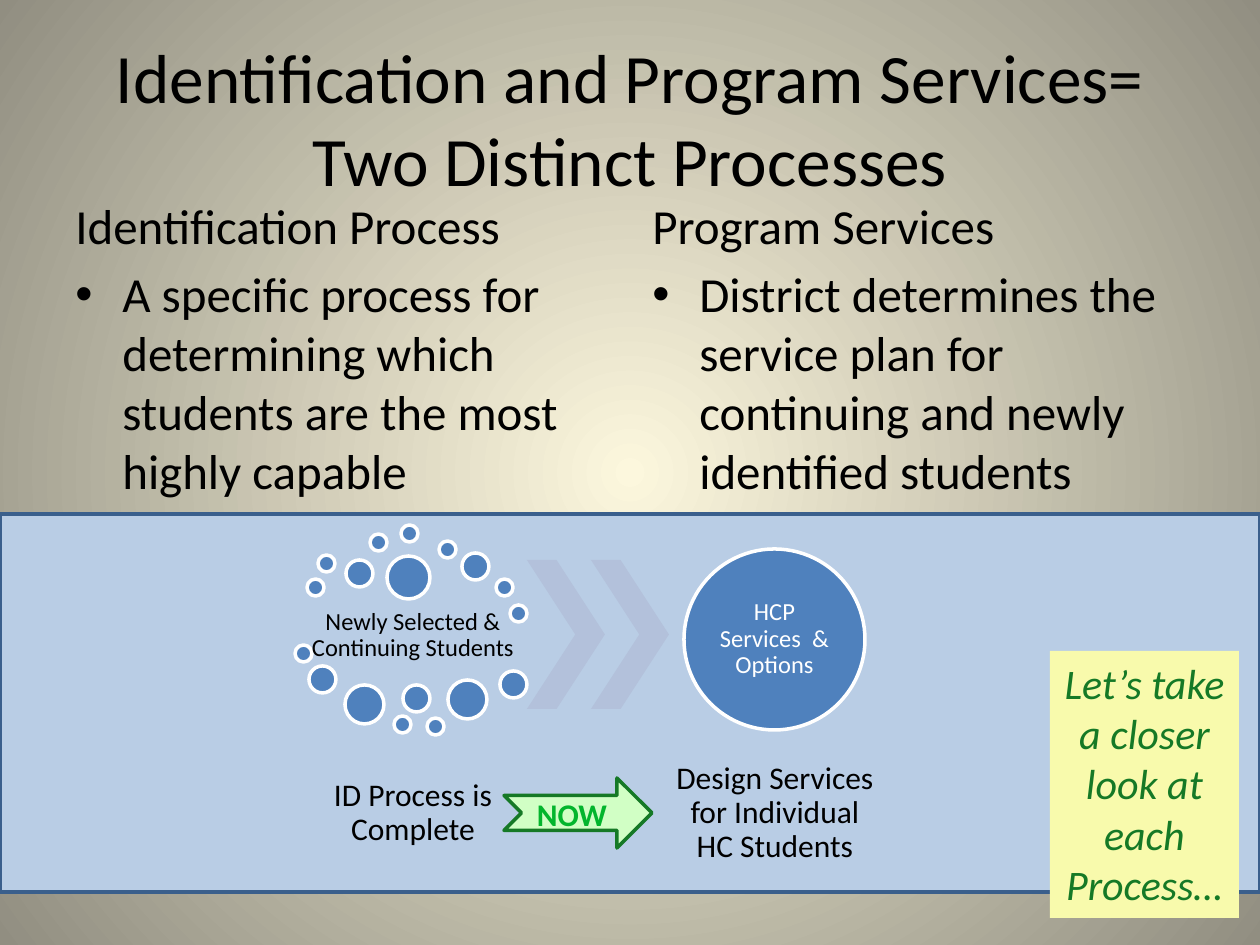
import lxml.etree
import pptx
import pptx.dml.color
import pptx.enum.shapes
import pptx.enum.text
import pptx.oxml
import pptx.oxml.ns
import pptx.util

PX = 7257  # EMU per pixel, at 126 pixels to the inch
BLUE, WHITE, BLACK, GREEN = "4F81BD", "FFFFFF", "000000", "157926"
SHAPE = pptx.enum.shapes.MSO_SHAPE
ANCHOR = pptx.enum.text.MSO_ANCHOR
ALIGN = pptx.enum.text.PP_ALIGN
color = pptx.dml.color.RGBColor.from_string
qn = pptx.oxml.ns.qn

presentation = pptx.Presentation()
presentation.slide_width = pptx.util.Inches(10)
presentation.slide_height = pptx.util.Inches(7.5)
slide = presentation.slides.add_slide(presentation.slide_layouts[6])


def add_shape(kind, box, fill, line=None):
    shape = slide.shapes.add_shape(kind, *[length * PX for length in box])
    shape.shadow.inherit = False
    shape.fill.solid()
    shape.fill.fore_color.rgb = color(fill)
    if line:
        shape.line.color.rgb = color(line)
        shape.line.width = pptx.util.Pt(2)
    else:
        shape.line.fill.background()
    return shape


def add_text(box, lines, size, text_color=BLACK, align=ALIGN.CENTER,
             anchor=ANCHOR.MIDDLE, inset=None, spacing=None):
    """Add a text box with one paragraph per line; inset is in pixels."""
    shape = slide.shapes.add_textbox(*[length * PX for length in box])
    frame = shape.text_frame
    frame.word_wrap = True
    frame.vertical_anchor = anchor
    if inset is not None:
        frame.margin_left = frame.margin_right = inset * PX
        frame.margin_top = frame.margin_bottom = inset * PX
    frame.text = "\n".join(lines)
    for paragraph in frame.paragraphs:
        paragraph.alignment = align
        paragraph.line_spacing = spacing
        paragraph.font.name = "Calibri"
        paragraph.font.size = pptx.util.Pt(size)
        paragraph.font.color.rgb = color(text_color)
    return shape


# Radial background
background = slide.background.fill
background.gradient()
for stop, stop_color in zip(background.gradient_stops, ("FCF7DD", "918E81")):
    stop.color.rgb = color(stop_color)
gradient = slide.background._cSld.find(".//" + qn("a:gradFill"))
gradient.remove(gradient.find(qn("a:lin")))
radial = lxml.etree.SubElement(gradient, qn("a:path"), path="circle")
lxml.etree.SubElement(radial, qn("a:fillToRect"),
                      l="50000", t="50000", r="50000", b="50000")

# Process diagram
add_shape(SHAPE.RECTANGLE, (0, 514, 1260, 378), "B9CDE5", "3A5F8C")

dots_by_size = {
    17: [(307, 579), (318, 555), (370, 534), (401, 525), (439, 541), (496, 579),
         (510, 605), (295, 645), (394, 716), (427, 718)],
    27: [(346, 560), (462, 553), (309, 666), (403, 685), (500, 671)],
    39: [(345, 685), (448, 680)],
    43: [(387, 556)],
}
for diameter, corners in dots_by_size.items():
    for left, top in corners:
        add_shape(SHAPE.OVAL, (left, top, diameter, diameter), BLUE, WHITE)

for left in (527, 591):
    chevron = add_shape(SHAPE.CHEVRON, (left, 560, 78, 149), "B3C1DB")
    chevron.adjustments[0] = 0.62

add_shape(SHAPE.OVAL, (684, 549, 181, 181), BLUE, WHITE)

for box, text, size, text_color, inset in [
    ((307, 601, 212, 69), "Newly Selected & Continuing Students", 14, BLACK, 2),
    ((711, 576, 127, 127), "HCP Services  & Options", 14, WHITE, 0),
    ((307, 748, 212, 131), "ID Process is Complete", 18, BLACK, 4),
    ((669, 748, 212, 131), "Design Services for Individual HC Students", 18, BLACK, 4),
]:
    add_text(box, [text], size, text_color, inset=inset, spacing=0.9)

add_shape(SHAPE.NOTCHED_RIGHT_ARROW, (504, 778, 148, 70), "D1FFC5", GREEN)

# Title and columns
add_text((63, 38, 1134, 158),
         ["Identification and Program Services= Two Distinct Processes"], 39.6)

columns = [
    (63, "Identification Process",
     "A specific process for determining which students are the most highly capable"),
    (640, "Program Services",
     "District determines the service plan for continuing and newly identified students"),
]
for left, heading, detail in columns:
    column = add_text((left, 189, 557, 330), [heading, detail], 28,
                      align=ALIGN.LEFT, anchor=ANCHOR.TOP)
    bullet = column.text_frame.paragraphs[1]
    bullet.space_before = pptx.util.Pt(5.6)
    properties = bullet._p.get_or_add_pPr()
    properties.set("marL", str(47 * PX))
    properties.set("indent", str(-47 * PX))
    bullet_font = pptx.oxml.parse_xml(
        f'<a:buFont {pptx.oxml.ns.nsdecls("a")} typeface="Arial"/>')
    properties.append(bullet_font)
    lxml.etree.SubElement(properties, qn("a:buChar"), char="•")

# Callouts
now = add_text((514, 789, 116, 50), ["NOW"], 18, "03B52D", anchor=ANCHOR.TOP)
now.text_frame.paragraphs[0].font.bold = True

note = add_text((1050, 651, 189, 267), ["Let’s take a closer look at each Process…"],
                24, GREEN, anchor=ANCHOR.TOP)
note.fill.solid()
note.fill.fore_color.rgb = color("F8FAAC")
note.text_frame.paragraphs[0].font.italic = True

presentation.save("out.pptx")
